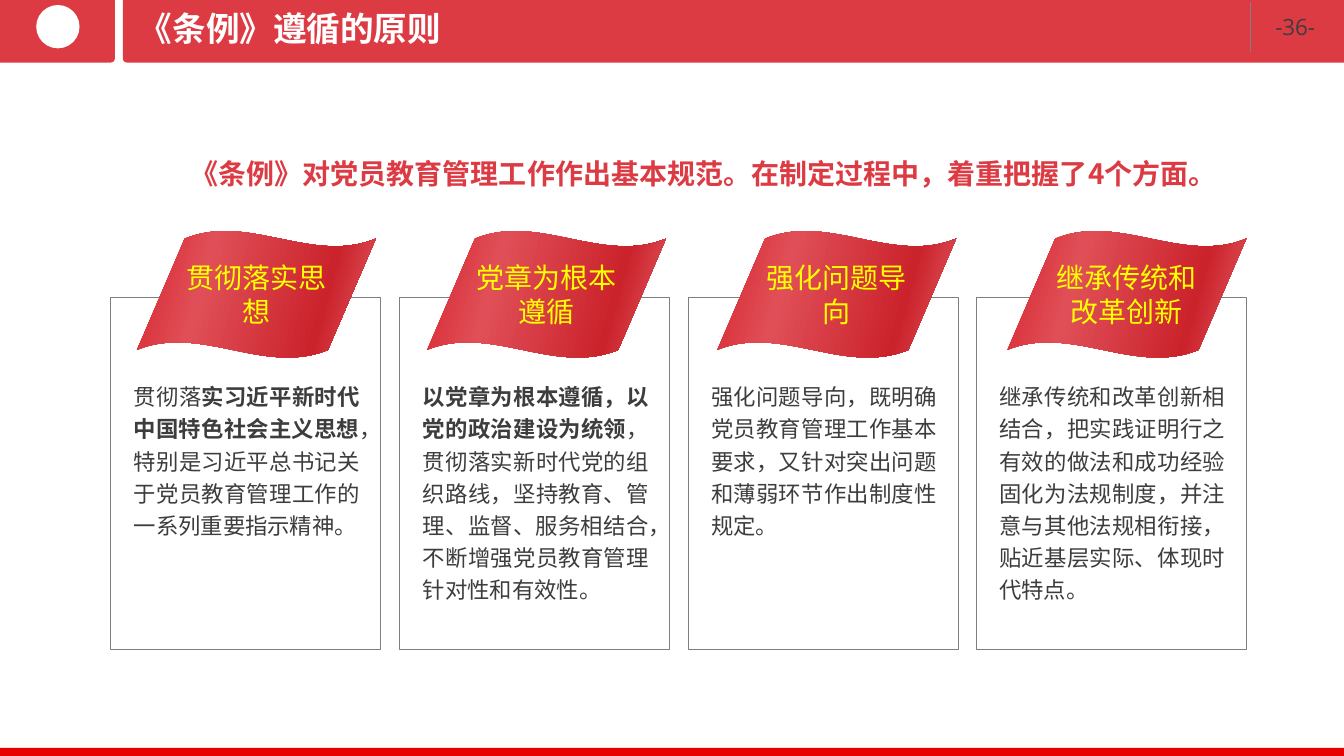
import math
from dataclasses import dataclass

from lxml import etree
from pptx import Presentation
from pptx import util as u
from pptx.dml.color import RGBColor
from pptx.enum import shapes, text
from pptx.oxml import ns

PX = 9144
COLORS = {
    "red": "DD3B44",
    "footer": "E60000",
    "white": "FFFFFF",
    "ink": "3D3D3D",
    "gray": "7F7F7F",
    "yellow": "FFFF00",
}
FLAG_STOPS = {0: "D7252F", 29: "E04F57", 76: "CB232C", 100: "E35D64"}
CJK = "Noto Sans CJK SC"
CARD_TOP, CARD_WIDTH, CARD_HEIGHT = 295, 268, 349
BODY_INSET, BODY_TOP, BODY_WIDTH, BODY_HEIGHT = 13, 370, 244, 234
FLAG_LEFT, FLAG_PITCH = 136, 288
TAB_TOP, TAB_BOTTOM, TAB_RADIUS = -3, 62, 4


@dataclass
class Span:
    words: str
    bold: bool = False


@dataclass
class Card:
    left: int
    label: str
    body: list[Span]


@dataclass
class Style:
    size: int
    color: str
    font: str = CJK
    align: text.PP_ALIGN = text.PP_ALIGN.LEFT
    spacing: float = 1.0


TITLE = Style(24, "white", "Arial")
NUMBER = Style(16, "ink", "Open Sans")
LEAD = Style(20, "red", align=text.PP_ALIGN.CENTER, spacing=1.5)
LABEL = Style(20, "yellow", align=text.PP_ALIGN.CENTER)
BODY = Style(16, "ink", align=text.PP_ALIGN.JUSTIFY, spacing=1.2)

CARDS = [
    Card(110, "贯彻落实思想", [
        Span("贯彻落"),
        Span("实习近平新时代中国特色社会主义思想", True),
        Span("，特别是习近平总书记关于党员教育管理工作的一系列重要指示精神。"),
    ]),
    Card(397, "党章为根本遵循", [
        Span("以党章为根本遵循，以党的政治建设为统领", True),
        Span("，贯彻落实新时代党的组织路线，坚持教育、管理、监督、服务相结合，"
             "不断增强党员教育管理针对性和有效性。"),
    ]),
    Card(683, "强化问题导向", [
        Span("强化问题导向，既明确党员教育管理工作基本要求，"
             "又针对突出问题和薄弱环节作出制度性规定。"),
    ]),
    Card(969, "继承传统和改革创新", [
        Span("继承传统和改革创新相结合，把实践证明行之有效的做法和成功经验"
             "固化为法规制度，并注意与其他法规相衔接，贴近基层实际、体现时代特点。"),
    ]),
]


def px(*lengths: float) -> list[u.Emu]:
    return [u.Emu(round(length * PX)) for length in lengths]


def rgb(name: str) -> RGBColor:
    return RGBColor.from_string(COLORS[name])


def write(frame, spans: list[Span], style: Style) -> None:
    para = frame.paragraphs[0]
    para.alignment = style.align
    para.line_spacing = style.spacing
    for span in spans:
        run = para.add_run()
        run.text = span.words
        run.font.size = u.Pt(style.size)
        run.font.bold = span.bold
        run.font.name = style.font
        run.font.color.rgb = rgb(style.color)
        east = etree.SubElement(run.font._element, ns.qn("a:ea"))
        east.set("typeface", CJK)


def add_text(page, left: int, top: int, width: int, height: int,
             spans: list[Span], style: Style, wrap: bool = True):
    box = page.shapes.add_textbox(*px(left, top, width, height))
    box.text_frame.word_wrap = wrap
    write(box.text_frame, spans, style)
    return box


def paint(shape, fill: str, line: str | None = None) -> None:
    shape.shadow.inherit = False
    shape.fill.solid()
    shape.fill.fore_color.rgb = rgb(fill)
    if line:
        shape.line.color.rgb = rgb(line)
        shape.line.width = u.Pt(0.75)
    else:
        shape.line.fill.background()


def add_shape(page, kind, left: int, top: int, width: int, height: int,
              fill: str, line: str | None = None) -> None:
    paint(page.shapes.add_shape(kind, *px(left, top, width, height)), fill, line)


def add_tab(page, square_x: int, round_x: int) -> None:
    side = 1 if round_x > square_x else -1
    center_x = round_x - side * TAB_RADIUS
    points = [(square_x, TAB_TOP)]
    for center_y, start in ((TAB_TOP + TAB_RADIUS, -90), (TAB_BOTTOM - TAB_RADIUS, 0)):
        for degrees in range(start, start + 91, 15):
            angle = math.radians(degrees)
            points.append((center_x + side * TAB_RADIUS * math.cos(angle),
                           center_y + TAB_RADIUS * math.sin(angle)))
    points.append((square_x, TAB_BOTTOM))
    outline = [tuple(px(*point)) for point in points]
    builder = page.shapes.build_freeform(*outline[0])
    builder.add_line_segments(outline[1:], close=True)
    paint(builder.convert_to_shape(), "red")


def add_flag(page, left: int, label: str) -> None:
    flag = page.shapes.add_shape(shapes.MSO_SHAPE.WAVE, *px(left, 229, 237, 126))
    flag.adjustments[0] = 0.062
    flag.adjustments[1] = -0.1
    flag.shadow.inherit = False
    flag.line.fill.background()
    flag.fill.gradient()
    flag.fill.gradient_angle = 345
    stops = flag._element.spPr.find(".//" + ns.qn("a:gsLst"))
    for stop in list(stops):
        stops.remove(stop)
    for percent, color in FLAG_STOPS.items():
        stop = etree.SubElement(stops, ns.qn("a:gs"), pos=str(percent * 1000))
        etree.SubElement(stop, ns.qn("a:srgbClr"), val=color)
    frame = flag.text_frame
    frame.word_wrap = True
    frame.vertical_anchor = text.MSO_ANCHOR.MIDDLE
    frame.margin_left = frame.margin_right = frame.margin_top = frame.margin_bottom = 0
    write(frame, [Span(label)], LABEL)


def add_header(page) -> None:
    add_tab(page, 0, 114)
    add_tab(page, 1334, 122)
    add_text(page, 1256, 8, 64, 37, [Span("-36-")], NUMBER, wrap=False)
    divider = page.shapes.add_connector(
        shapes.MSO_CONNECTOR.STRAIGHT, *px(1241, 2, 1241, 52))
    divider.line.color.rgb = rgb("gray")
    divider.line.width = u.Pt(0.75)
    etree.SubElement(divider._element.spPr, ns.qn("a:effectLst"))
    add_shape(page, shapes.MSO_SHAPE.OVAL, 36, 5, 43, 43, "white")
    title = add_text(page, 128, 0, 902, 55, [Span("《条例》遵循的原则", True)], TITLE)
    title.text_frame.vertical_anchor = text.MSO_ANCHOR.MIDDLE


def main() -> None:
    deck = Presentation()
    deck.slide_width, deck.slide_height = px(1334, 750)
    page = deck.slides.add_slide(deck.slide_layouts[6])
    add_header(page)
    add_shape(page, shapes.MSO_SHAPE.RECTANGLE, 0, 742, 1334, 8, "footer")
    lead = "《条例》对党员教育管理工作作出基本规范。在制定过程中，着重把握了4个方面。"
    add_text(page, 102, 134, 1193, 55, [Span(lead, True)], LEAD)
    for index, card in enumerate(CARDS):
        add_shape(page, shapes.MSO_SHAPE.RECTANGLE, card.left, CARD_TOP,
                  CARD_WIDTH, CARD_HEIGHT, "white", "gray")
        add_text(page, card.left + BODY_INSET, BODY_TOP, BODY_WIDTH, BODY_HEIGHT,
                 card.body, BODY)
        add_flag(page, FLAG_LEFT + index * FLAG_PITCH, card.label)
    deck.save("out.pptx")


if __name__ == "__main__":
    main()
